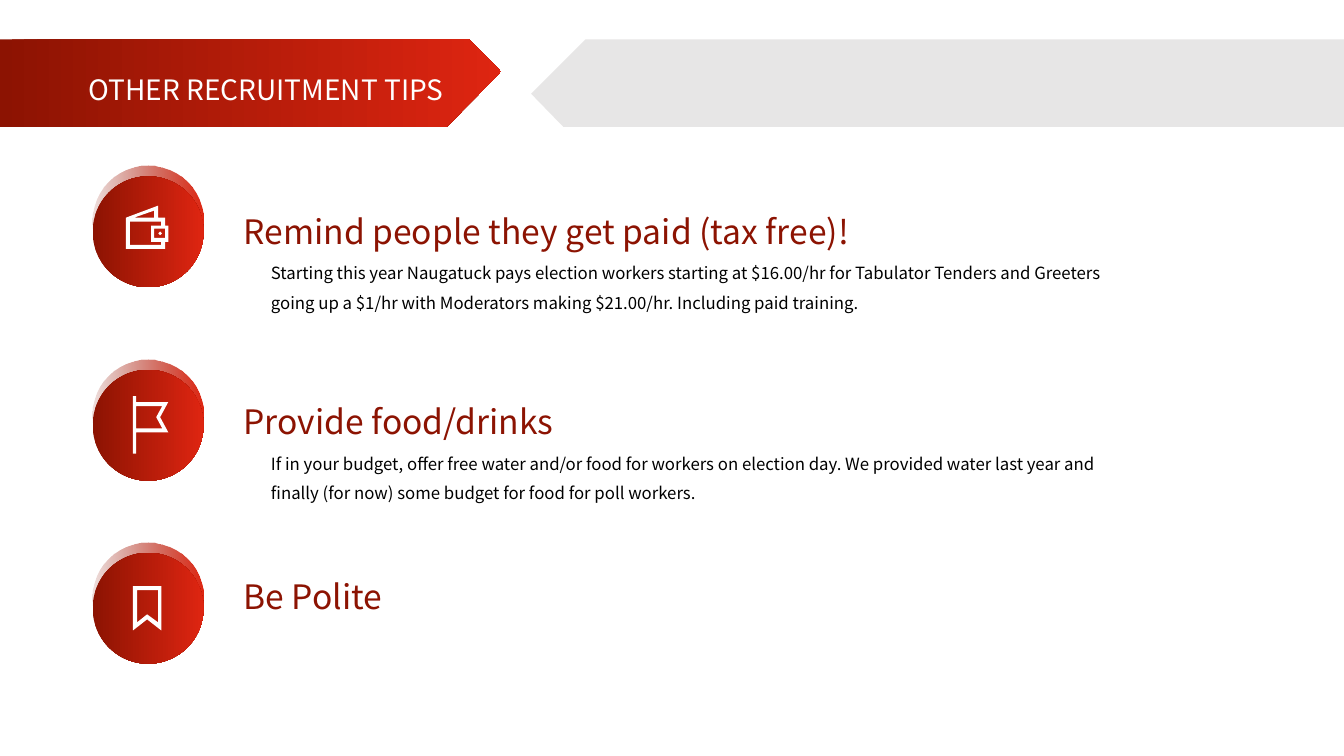
from dataclasses import dataclass

from pptx import Presentation
from pptx.dml.color import RGBColor
from pptx.enum.shapes import MSO_SHAPE
from pptx.enum.text import MSO_AUTO_SIZE
from pptx.oxml.ns import qn
from pptx.util import Pt

OVAL = MSO_SHAPE.OVAL
GROW = MSO_AUTO_SIZE.SHAPE_TO_FIT_TEXT
FONT = "Noto Sans CJK SC"
DARK_RED, BRIGHT_RED = "8C1302", "DE2511"
WHITE, BLACK, GRAY = "FFFFFF", "000000", "E7E6E6"
BADGE_LEFT, BADGE_SIZE, HALO_RISE = 66.2, 79.2, 7.7
HEADING_LEFT, HEADING_WIDTH, HEADING_HEIGHT = 167, 625.7, 36
BODY_LEFT, BODY_WIDTH, BODY_HEIGHT, BODY_DROP = 186.5, 631.4, 49, 31

Outline = list[tuple[float, float]]

WALLET: list[Outline] = [
    [(51.8, 35.3), (51.8, 29.5), (46.8, 29.5), (46.8, 20.9), (23.8, 29.5), (23.8, 51.8),
     (51.8, 51.8), (51.8, 46.8), (54, 46.8), (54, 35.3)],
    [(43.9, 24.5), (43.9, 29.5), (29.5, 29.5)],
    [(49, 49), (26.6, 49), (26.6, 32.4), (49, 32.4), (49, 35.3), (41.8, 35.3),
     (41.8, 46.8), (49, 46.8)],
    [(51.8, 43.9), (43.9, 43.9), (43.9, 37.4), (51.8, 37.4)],
    [(48.2, 42), (49.5, 40.7), (48.2, 39.4), (46.9, 40.7)],
]
FLAG: list[Outline] = [
    [(54, 23), (31, 23), (31, 18.7), (28.8, 18.7), (28.8, 59.8), (31, 59.8), (31, 44.6),
     (54, 44.6), (48.2, 33.8)],
    [(49.7, 41.8), (31, 41.8), (31, 25.9), (49.7, 25.9), (45.4, 33.8)],
]
BOOKMARK: list[Outline] = [
    [(49, 23.8), (28.8, 23.8), (28.8, 55.4), (38.9, 47.5), (49, 55.4)],
    [(38.9, 43.9), (31.7, 49.7), (31.7, 26.6), (46.8, 26.6), (46.8, 49.7)],
]
TITLE_BANNER: Outline = [
    (0, 28.1), (335, 28.1), (358, 51.1), (319, 90.7), (0, 90.7),
]
EMPTY_BANNER: Outline = [
    (418.3, 28.1), (960, 28.1), (960, 90.7), (402.5, 90.7), (379.4, 67),
]


@dataclass
class Tip:
    heading: str
    body: str
    icon: list[Outline]
    badge_top: float
    heading_top: float


TIPS = [
    Tip("Remind people they get paid (tax free)!",
        "Starting this year Naugatuck pays election workers starting at $16.00/hr for "
        "Tabulator Tenders and Greeters going up a $1/hr with Moderators making "
        "$21.00/hr. Including paid training.",
        WALLET, 126, 146.9),
    Tip("Provide food/drinks",
        "If in your budget, offer free water and/or food for workers on election day. "
        "We provided water last year and finally (for now) some budget for food for "
        "poll workers.",
        FLAG, 264.2, 283),
    Tip("Be Polite", "", BOOKMARK, 394.9, 408.2),
]


def color(hex_code: str) -> RGBColor:
    return RGBColor.from_string(hex_code)


def fill_solid(shape, hex_code: str) -> None:
    shape.fill.solid()
    shape.fill.fore_color.rgb = color(hex_code)


def fill_red(shape, start_opacity: int = 100) -> None:
    shape.fill.gradient()
    shape.fill.gradient_angle = 0
    for stop, hex_code in zip(shape.fill.gradient_stops, (DARK_RED, BRIGHT_RED)):
        stop.color.rgb = color(hex_code)
    if start_opacity < 100:
        start_color = shape.element.find(".//" + qn("a:srgbClr"))
        alpha = start_color.makeelement(qn("a:alpha"), {"val": str(start_opacity * 1000)})
        start_color.append(alpha)


def make_plain(shape) -> None:
    shape.shadow.inherit = False
    shape.line.fill.background()


def draw_outlines(slide, outlines: list[Outline], left: float = 0, top: float = 0):
    contours = [[(Pt(left + x), Pt(top + y)) for x, y in outline] for outline in outlines]
    builder = slide.shapes.build_freeform(*contours[0][0])
    for index, contour in enumerate(contours):
        if index:
            builder.move_to(*contour[0])
        builder.add_line_segments(contour[1:], close=True)
    shape = builder.convert_to_shape()
    make_plain(shape)
    return shape


def draw_circle(slide, top: float, start_opacity: int = 100) -> None:
    circle = slide.shapes.add_shape(
        OVAL, Pt(BADGE_LEFT), Pt(top), Pt(BADGE_SIZE), Pt(BADGE_SIZE))
    make_plain(circle)
    fill_red(circle, start_opacity)


def add_text(slide, text: str, *, left: float, top: float, width: float, height: float,
             size: float, hex_code: str, line_spacing: float = 1.0) -> None:
    box = slide.shapes.add_textbox(Pt(left), Pt(top), Pt(width), Pt(height))
    frame = box.text_frame
    frame.word_wrap = True
    frame.auto_size = GROW
    paragraph = frame.paragraphs[0]
    paragraph.line_spacing = line_spacing
    run = paragraph.add_run()
    run.text = text
    run.font.name = FONT
    run.font.size = Pt(size)
    run.font.color.rgb = color(hex_code)


def draw_tip(slide, tip: Tip) -> None:
    draw_circle(slide, tip.badge_top - HALO_RISE, start_opacity=13)
    draw_circle(slide, tip.badge_top)
    fill_solid(draw_outlines(slide, tip.icon, BADGE_LEFT, tip.badge_top), WHITE)
    add_text(slide, tip.heading, left=HEADING_LEFT, top=tip.heading_top,
             width=HEADING_WIDTH, height=HEADING_HEIGHT, size=24, hex_code=DARK_RED)
    if tip.body:
        add_text(slide, tip.body, left=BODY_LEFT, top=tip.heading_top + BODY_DROP,
                 width=BODY_WIDTH, height=BODY_HEIGHT, size=12, hex_code=BLACK,
                 line_spacing=1.45)


def main() -> None:
    presentation = Presentation()
    presentation.slide_width = Pt(960)
    presentation.slide_height = Pt(540)
    slide = presentation.slides.add_slide(presentation.slide_layouts[6])
    fill_red(draw_outlines(slide, [TITLE_BANNER]))
    fill_solid(draw_outlines(slide, [EMPTY_BANNER]), GRAY)
    add_text(slide, "OTHER RECRUITMENT TIPS", left=56.2, top=41, width=301.7, height=39,
             size=20, hex_code=WHITE, line_spacing=1.3)
    for tip in TIPS:
        draw_tip(slide, tip)
    presentation.save("out.pptx")


if __name__ == "__main__":
    main()
